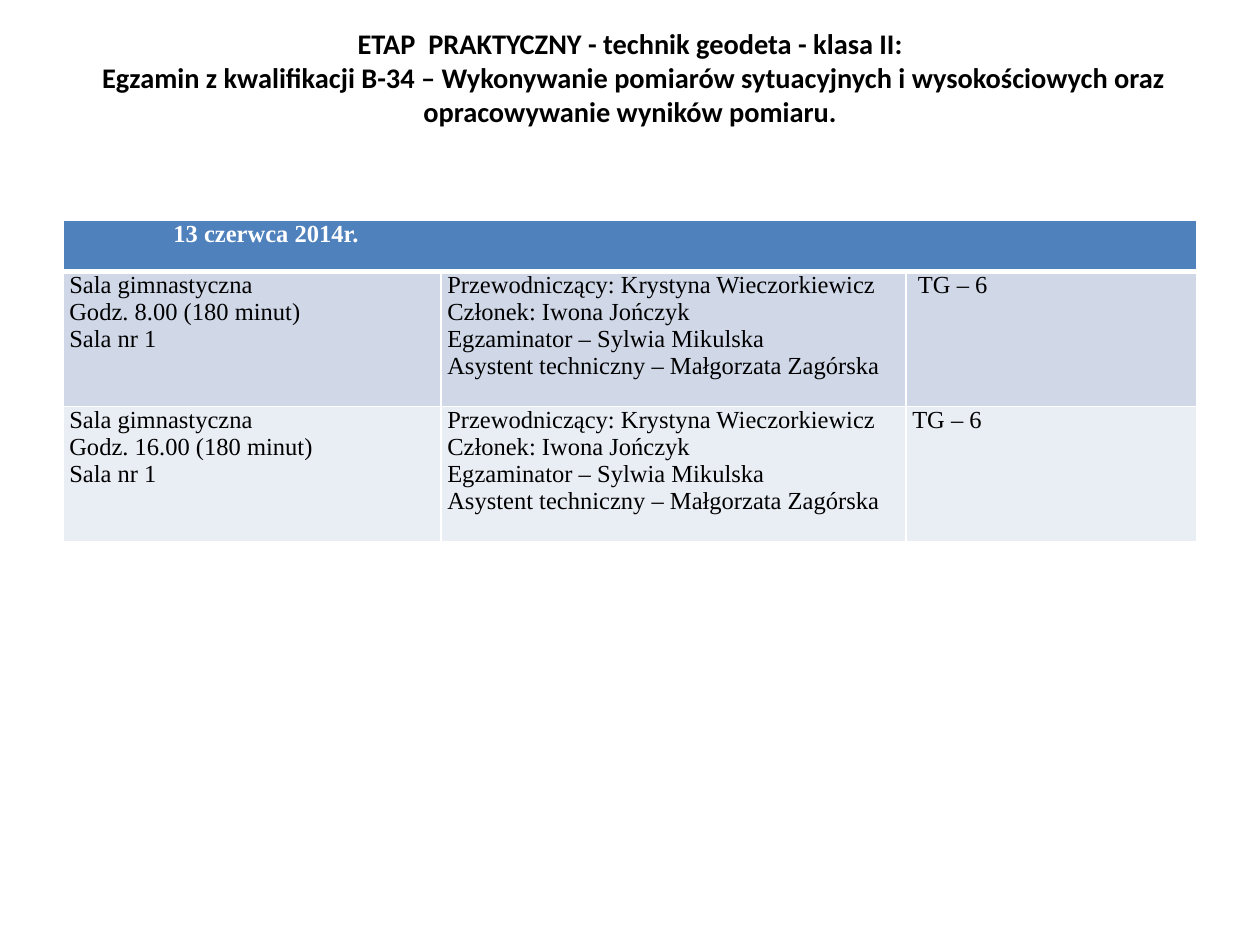
import pptx
import pptx.chart.data
import pptx.dml.color
import pptx.enum.text
import pptx.oxml
import pptx.util

Pt = pptx.util.Pt

HEADING = (
    "ETAP  PRAKTYCZNY - technik geodeta - klasa II:\v"
    " Egzamin z kwalifikacji B-34 – Wykonywanie pomiarów sytuacyjnych "
    "i wysokościowych oraz opracowywanie wyników pomiaru."
)
EXAM_DATE = "13 czerwca 2014r."
COMMITTEE = [
    "Przewodniczący: Krystyna Wieczorkiewicz",
    "Członek: Iwona Jończyk",
    "Egzaminator – Sylwia Mikulska",
    "Asystent techniczny – Małgorzata Zagórska",
]
SESSIONS = [("8.00", " TG – 6"), ("16.00", "TG – 6")]
COLORS = {
    "header": "4F81BD",
    "odd": "D0D8E8",
    "even": "E9EDF4",
    "border": "FFFFFF",
    "light": "FFFFFF",
    "dark": "000000",
}
COLUMN_WIDTHS = [216, 265.7, 166.3]
ROW_HEIGHTS = [29, 77.4, 77.4]
DATE_INDENT = 59.5


def rgb(name):
    return pptx.dml.color.RGBColor.from_string(COLORS[name])


def style(paragraph, font_name, size, color, bold):
    font = paragraph.font
    font.name, font.size, font.bold = font_name, Pt(size), bold
    font.color.rgb = rgb(color)


def add_borders(cell, bottom, top):
    properties = cell._tc.get_or_add_tcPr()
    widths = {"lnL": 1, "lnR": 1, "lnT": top, "lnB": bottom}
    for position, (side, width) in enumerate(widths.items()):
        line = pptx.oxml.parse_xml(
            f'<a:{side} xmlns:a="http://schemas.openxmlformats.org/drawingml/2006/main"'
            f' w="{Pt(width)}"><a:solidFill><a:srgbClr val="{COLORS["border"]}"/>'
            f"</a:solidFill></a:{side}>"
        )
        properties.insert(position, line)


def fill_cell(cell, lines, fill, color="dark", bold=False):
    cell.margin_left = cell.margin_right = Pt(3.6)
    cell.margin_top = cell.margin_bottom = 0
    cell.fill.solid()
    cell.fill.fore_color.rgb = rgb(fill)
    cell.text = "\n".join(lines)
    for paragraph in cell.text_frame.paragraphs:
        style(paragraph, "Times New Roman", 14, color, bold)


def add_heading(slide):
    heading = slide.shapes.title
    heading.left, heading.top = Pt(36), Pt(15)
    heading.width, heading.height = Pt(648), Pt(90)
    frame = heading.text_frame
    frame.text = HEADING
    frame.word_wrap = True
    frame.auto_size = pptx.enum.text.MSO_AUTO_SIZE.NONE
    frame.vertical_anchor = pptx.enum.text.MSO_ANCHOR.TOP
    frame.margin_top = frame.margin_bottom = 0
    paragraph = frame.paragraphs[0]
    paragraph.alignment = pptx.enum.text.PP_ALIGN.CENTER
    style(paragraph, "Calibri", 16.2, "dark", True)


def add_schedule(slide):
    schedule = slide.shapes.add_table(
        len(ROW_HEIGHTS), len(COLUMN_WIDTHS), Pt(36), Pt(126),
        Pt(sum(COLUMN_WIDTHS)), Pt(sum(ROW_HEIGHTS)),
    ).table
    for column, width in zip(schedule.columns, COLUMN_WIDTHS):
        column.width = Pt(width)
    for row, height in zip(schedule.rows, ROW_HEIGHTS):
        row.height = Pt(height)

    date_cell = schedule.cell(0, 0)
    date_cell.merge(schedule.cell(0, len(COLUMN_WIDTHS) - 1))
    for cell in schedule.rows[0].cells:
        fill_cell(cell, [], "header", "light", True)
    fill_cell(date_cell, [EXAM_DATE], "header", "light", True)
    date_properties = date_cell.text_frame.paragraphs[0]._p.get_or_add_pPr()
    date_properties.set("marL", str(Pt(DATE_INDENT)))

    for number, (hour, group) in enumerate(SESSIONS, 1):
        place = ["Sala gimnastyczna", f"Godz. {hour} (180 minut)", "Sala nr 1"]
        fill = "odd" if number % 2 else "even"
        for column, lines in enumerate([place, COMMITTEE, [group]]):
            fill_cell(schedule.cell(number, column), lines, fill)

    for number, row in enumerate(schedule.rows):
        for cell in row.cells:
            add_borders(cell, 3 if number == 0 else 1, 3 if number == 1 else 1)


def main():
    presentation = pptx.Presentation()
    presentation.slide_width, presentation.slide_height = Pt(720), Pt(540)
    slide = presentation.slides.add_slide(presentation.slide_layouts[5])
    add_heading(slide)
    add_schedule(slide)
    presentation.save("out.pptx")


if __name__ == "__main__":
    main()
